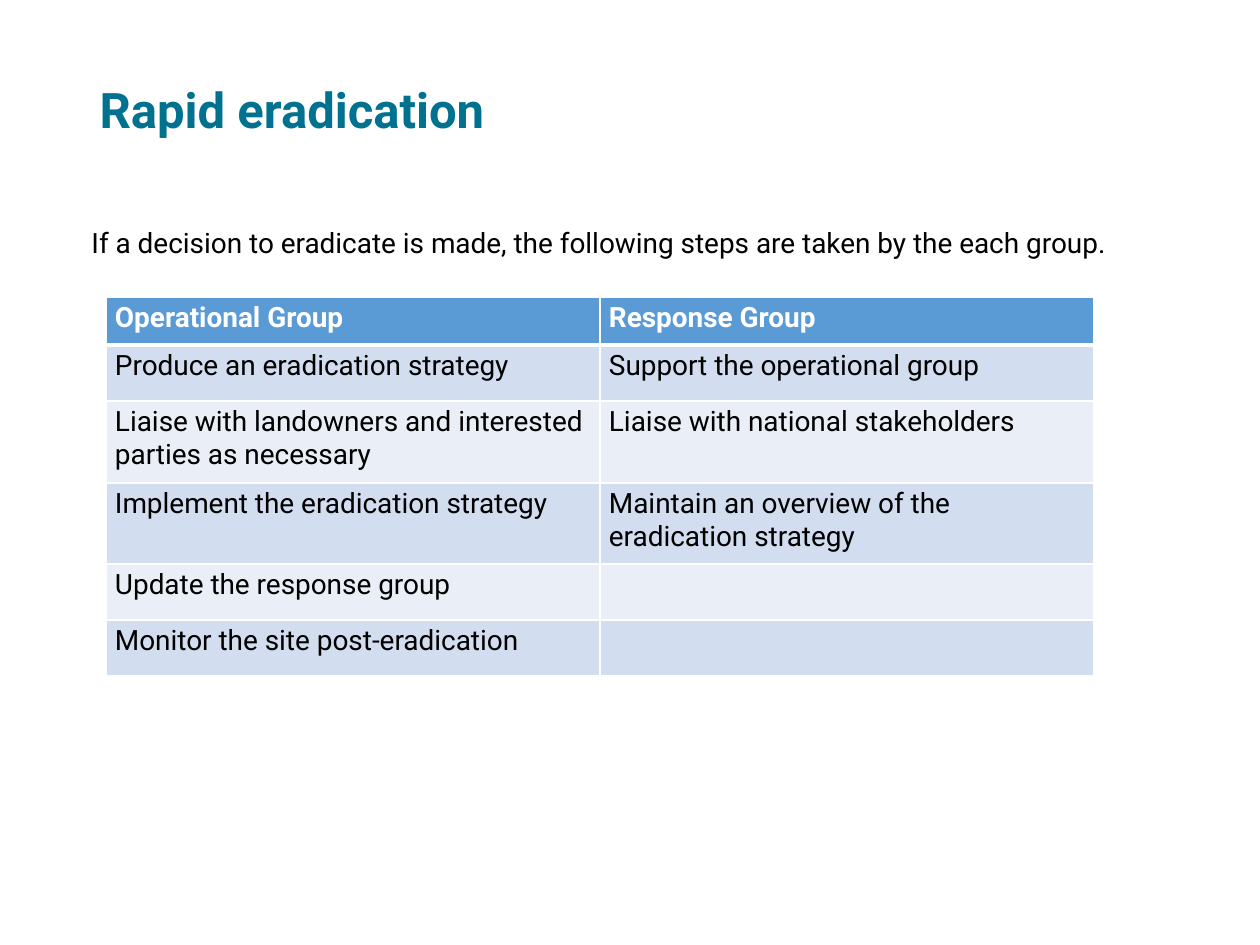
import dataclasses

import lxml.etree
import pptx
import pptx.dml.color
import pptx.enum.text
import pptx.oxml.ns
import pptx.util

EMU_PER_PX = 914400 / 126
FONT = "Roboto"
TITLE_ONLY = 5

TEAL = pptx.dml.color.RGBColor(0x00, 0x72, 0x8F)
BLACK = pptx.dml.color.RGBColor(0x00, 0x00, 0x00)
WHITE = pptx.dml.color.RGBColor(0xFF, 0xFF, 0xFF)
HEADER_BLUE = pptx.dml.color.RGBColor(0x5B, 0x9B, 0xD5)
DARK_BAND = pptx.dml.color.RGBColor(0xD2, 0xDE, 0xEF)
LIGHT_BAND = pptx.dml.color.RGBColor(0xEA, 0xEF, 0xF7)


@dataclasses.dataclass(frozen=True)
class TextStyle:
    size: int
    color: pptx.dml.color.RGBColor
    bold: bool = False


@dataclasses.dataclass(frozen=True)
class GroupRow:
    height: int
    operational: str
    response: str = ""


TITLE_STYLE = TextStyle(28, TEAL, bold=True)
BODY_STYLE = TextStyle(16, BLACK)
HEADER_STYLE = TextStyle(16, WHITE, bold=True)

ROWS = [
    GroupRow(48, "Operational Group", "Response Group"),
    GroupRow(56, "Produce an eradication strategy", "Support the operational group"),
    GroupRow(82, "Liaise with landowners and interested parties as necessary",
             "Liaise with national stakeholders"),
    GroupRow(81, "Implement the eradication strategy",
             "Maintain an overview of the eradication strategy"),
    GroupRow(56, "Update the response group"),
    GroupRow(56, "Monitor the site post-eradication"),
]
COLUMN_WIDTH = 494


def px(length: int) -> pptx.util.Emu:
    return pptx.util.Emu(round(length * EMU_PER_PX))


def add_text(para, text: str, style: TextStyle) -> None:
    run = para.add_run()
    run.text = text
    run.font.name = FONT
    run.font.size = pptx.util.Pt(style.size)
    run.font.bold = style.bold
    run.font.color.rgb = style.color


def set_borders(cell, bottom_width: int) -> None:
    """Draw white 1 pt borders, with a bottom border of the given points."""
    properties = cell._tc.get_or_add_tcPr()
    qn = pptx.oxml.ns.qn
    widths = {"a:lnL": 1, "a:lnR": 1, "a:lnT": 1, "a:lnB": bottom_width}
    for index, (tag, width) in enumerate(widths.items()):
        line = lxml.etree.Element(qn(tag), w=str(pptx.util.Pt(width)))
        fill = lxml.etree.SubElement(line, qn("a:solidFill"))
        lxml.etree.SubElement(fill, qn("a:srgbClr"), val=str(WHITE))
        properties.insert(index, line)


def add_title(slide) -> None:
    title = slide.shapes.title
    title.left, title.top, title.width, title.height = map(px, (87, 50, 737, 126))
    title.text_frame.vertical_anchor = pptx.enum.text.MSO_ANCHOR.MIDDLE
    title.text_frame.word_wrap = True
    para = title.text_frame.paragraphs[0]
    para.alignment = pptx.enum.text.PP_ALIGN.LEFT
    para.line_spacing = 0.9
    add_text(para, "Rapid eradication", TITLE_STYLE)


def add_introduction(slide) -> None:
    box = slide.shapes.add_textbox(*map(px, (79, 219, 1103, 180)))
    box.text_frame.word_wrap = True
    add_text(
        box.text_frame.paragraphs[0],
        "If a decision to eradicate is made, the following steps are taken by the each group.",
        BODY_STYLE,
    )


def add_group_table(slide) -> None:
    height = sum(row.height for row in ROWS)
    frame = slide.shapes.add_table(
        len(ROWS), 2, px(106), px(297), px(2 * COLUMN_WIDTH), px(height))
    table = frame.table
    table.horz_banding = False
    for column in table.columns:
        column.width = px(COLUMN_WIDTH)
    for index, row in enumerate(ROWS):
        table.rows[index].height = px(row.height)
        is_header = index == 0
        band = DARK_BAND if index % 2 else LIGHT_BAND
        for column_index, text in enumerate((row.operational, row.response)):
            cell = table.cell(index, column_index)
            cell.margin_left = cell.margin_right = px(9)
            cell.margin_top = cell.margin_bottom = px(5)
            cell.fill.solid()
            cell.fill.fore_color.rgb = HEADER_BLUE if is_header else band
            set_borders(cell, bottom_width=3 if is_header else 1)
            if text:
                add_text(cell.text_frame.paragraphs[0], text,
                         HEADER_STYLE if is_header else BODY_STYLE)


def main() -> None:
    deck = pptx.Presentation()
    deck.slide_width, deck.slide_height = px(1260), px(945)
    slide = deck.slides.add_slide(deck.slide_layouts[TITLE_ONLY])
    add_title(slide)
    add_introduction(slide)
    add_group_table(slide)
    deck.save("out.pptx")


if __name__ == "__main__":
    main()
